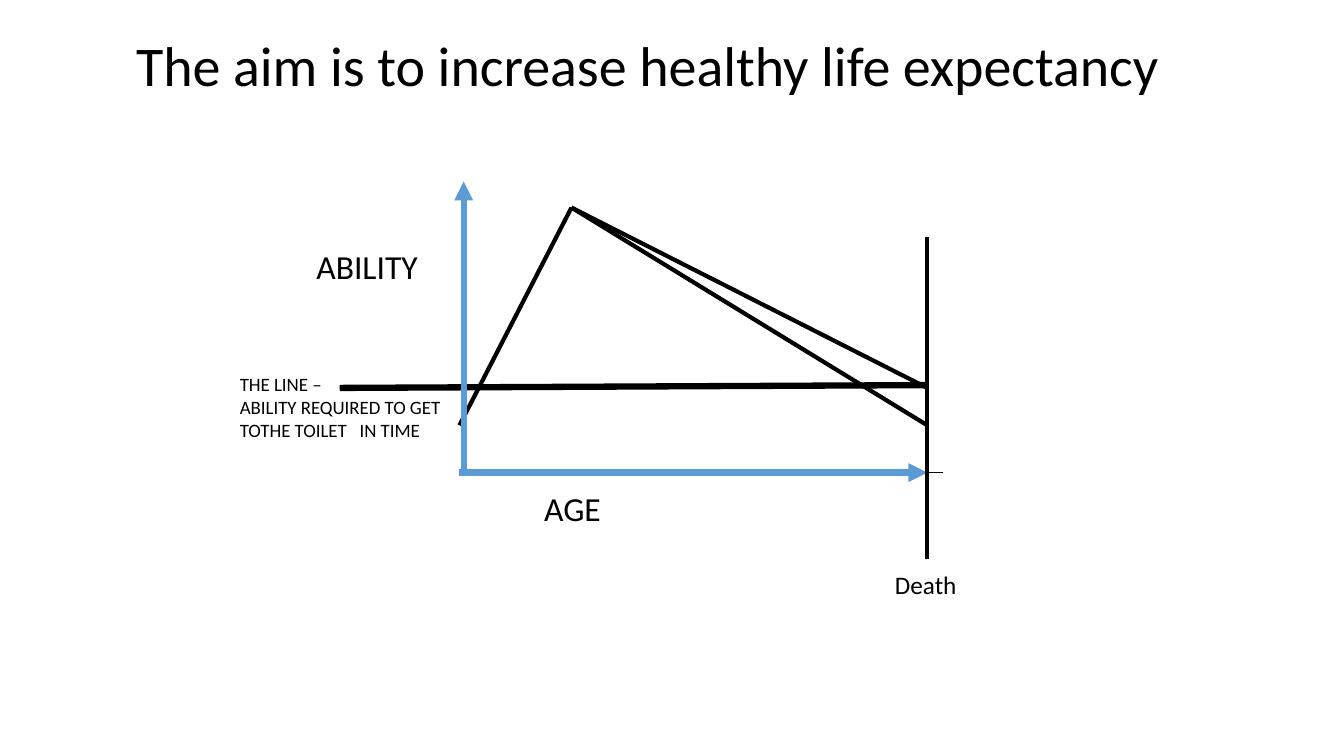
from lxml.etree import SubElement
from pptx import Presentation
from pptx.dml.color import RGBColor
from pptx.enum.shapes import MSO_CONNECTOR
from pptx.enum.text import MSO_ANCHOR, PP_ALIGN
from pptx.oxml.ns import qn
from pptx.util import Pt

BLACK, BLUE = "000000", "5B9BD5"


def color(code):
    return RGBColor.from_string(code)


def style(frame, lines, size):
    frame.word_wrap = True
    frame.vertical_anchor = MSO_ANCHOR.TOP
    frame.text = "\n".join(lines)
    look = {"name": "Calibri", "size": Pt(size), "bold": False}
    for para in frame.paragraphs:
        para.alignment = PP_ALIGN.LEFT
        for key, value in look.items():
            setattr(para.font, key, value)
        para.font.color.rgb = color(BLACK)


def label(slide, box, lines, size):
    shape = slide.shapes.add_textbox(*map(Pt, box))
    style(shape.text_frame, lines, size)


def stroke(slide, start, end, width, code=BLACK, arrow=False):
    line = slide.shapes.add_connector(
        MSO_CONNECTOR.STRAIGHT, *map(Pt, start + end))
    line.line.width = Pt(width)
    line.line.color.rgb = color(code)
    if arrow:
        SubElement(line.line._get_or_add_ln(), qn("a:tailEnd"), type="triangle")
    SubElement(line._element.spPr, qn("a:effectLst"))


def heading(slide, box, text):
    title = slide.shapes.title
    for key, value in zip(("left", "top", "width", "height"), box):
        setattr(title, key, Pt(value))
    style(title.text_frame, [text], 40)
    title.text_frame.paragraphs[0].line_spacing = 1.0


def graph(slide, box):
    left, top, width, height = box

    def at(x, y):
        return left + x, top + y

    # Thin base axes
    base = at(0, height)
    stroke(slide, at(0, 10), base, 0.75)
    stroke(slide, base, at(width + 11, height), 0.75)

    # Ability threshold
    stroke(slide, at(-88.5, 147.5), at(width, 145.5), 4.5)

    # Rise to the peak, then two courses of decline
    peak = at(77, 18.7)
    for end in ((width, 147.5), (width, 174.2), (-3, 174.2)):
        stroke(slide, peak, at(*end), 3)

    # Arrow axes
    stroke(slide, base, at(0, 0), 4.5, BLUE, True)
    stroke(slide, at(-3, height), at(width, height), 4.5, BLUE, True)

    # Death
    stroke(slide, at(width, 39.6), at(width, 270), 3)

    # Labels: offset, size of box, lines, font size
    notes = [
        ((-167, 133.2), (169.2, 56), ["THE LINE –",
         "ABILITY REQUIRED TO GET TOTHE TOILET   IN TIME"], 13.5),
        ((-112.3, 42.5), (100, 36), ["ABILITY"], 24),
        ((50.4, 215.3), (80, 36), ["AGE"], 24),
        ((301, 273.6), (102, 29), ["Death"], 18),
    ]
    for spot, span, lines, size in notes:
        label(slide, at(*spot) + span, lines, size)


def main():
    deck = Presentation()
    deck.slide_width, deck.slide_height = Pt(960), Pt(540)
    slide = deck.slides.add_slide(deck.slide_layouts[5])
    heading(slide, (90, 18, 746.6, 55.4),
            "The aim is to increase healthy life expectancy")
    graph(slide, (331.2, 129.6, 331.2, 208))
    deck.save("out.pptx")


if __name__ == "__main__":
    main()
